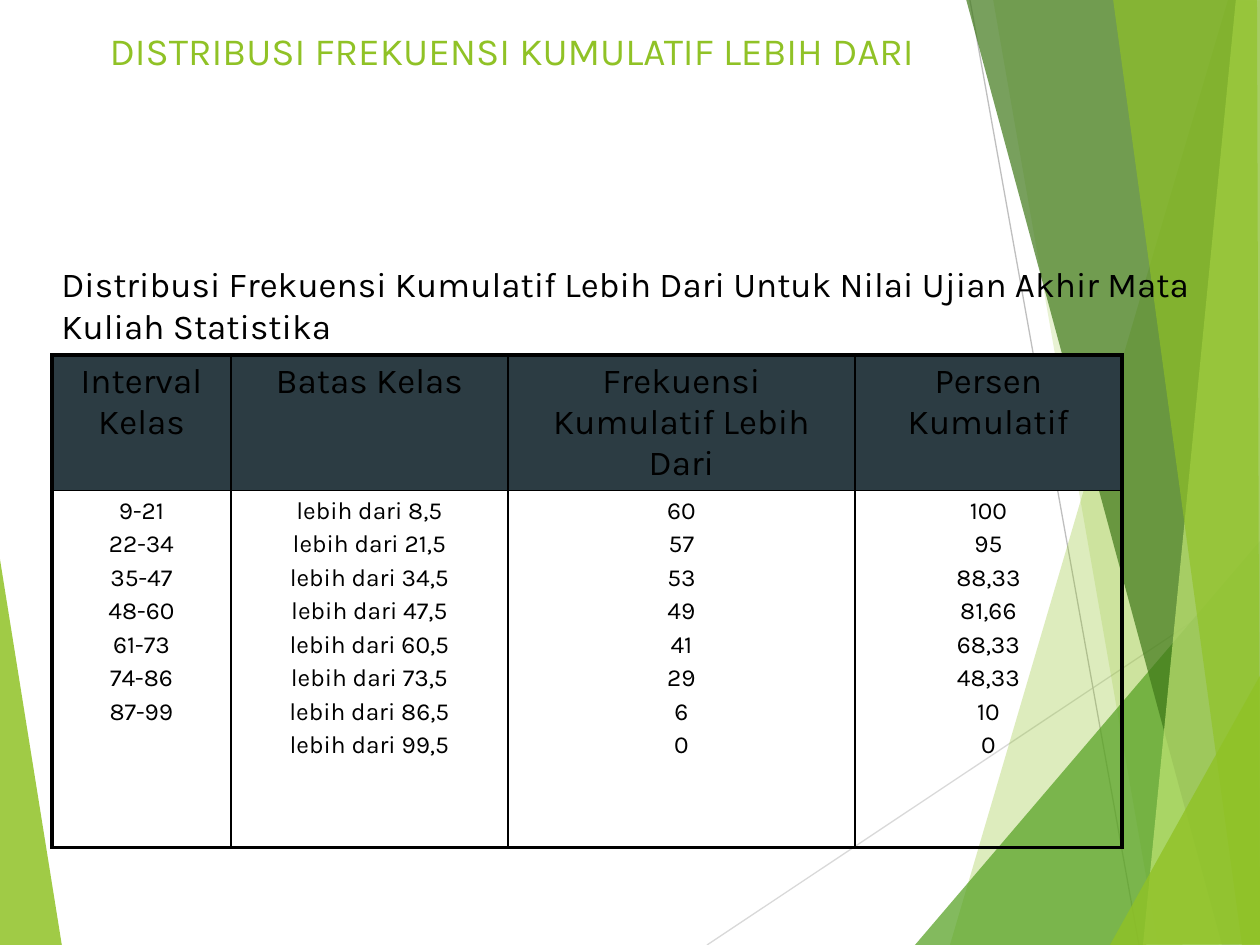
import pptx
import pptx.util
import pptx.oxml
import pptx.oxml.ns
import pptx.dml.color
import pptx.enum.shapes
import pptx.enum.text

SCALE = 914400 / 126  # EMU in one px
LIME, BLACK, SLATE = "90C226", "000000", "2C3C43"
ALIGN = pptx.enum.text.PP_ALIGN


def px(num):
    return pptx.util.Emu(round(num * SCALE))


def tint(code):
    return pptx.dml.color.RGBColor.from_string(code)


def node(tag, **attrs):
    item = pptx.oxml.parse_xml(f"<a:{tag} {pptx.oxml.ns.nsdecls('a')}/>")
    for key, val in attrs.items():
        item.set(key, str(val))
    return item


def write(frame, lines, size=20, color=BLACK, font="Karla", align=ALIGN.LEFT, gap=0):
    frame.word_wrap = True
    for i, line in enumerate(lines):
        para = frame.paragraphs[0] if i == 0 else frame.add_paragraph()
        para.alignment = align
        if i:
            para.space_before = pptx.util.Pt(gap)
        run = para.add_run()
        run.text = line
        run.font.name = font
        run.font.size = pptx.util.Pt(size)
        run.font.color.rgb = tint(color)


class Deck:
    def __init__(self):
        self.show = pptx.Presentation()
        self.show.slide_width, self.show.slide_height = px(1260), px(945)
        self.slide = self.show.slides.add_slide(self.show.slide_layouts[5])
        self.shapes = self.slide.shapes

    def shard(self, points, color, alpha):
        path = self.shapes.build_freeform(*points[0], scale=SCALE)
        path.add_line_segments(points[1:], close=True)
        shape = path.convert_to_shape()
        shape.shadow.inherit = False
        shape.line.fill.background()
        shape.fill.solid()
        shape.fill.fore_color.rgb = tint(color)
        clr = shape.fill._xPr.find(".//" + pptx.oxml.ns.qn("a:srgbClr"))
        clr.append(node("alpha", val=alpha * 1000))

    def line(self, ends, color):
        kind = pptx.enum.shapes.MSO_CONNECTOR.STRAIGHT
        line = self.shapes.add_connector(kind, *map(px, ends))
        line.line.color.rgb = tint(color)
        line.line.width = pptx.util.Pt(0.75)
        line._element.spPr.append(node("effectLst"))

    def title(self, text, box):
        title = self.shapes.title
        title.left, title.top, title.width, title.height = map(px, box)
        title.text_frame.vertical_anchor = pptx.enum.text.MSO_ANCHOR.TOP
        write(title.text_frame, [text], size=22, color=LIME)
        self.shapes._spTree.append(title._element)  # in front of the shards

    def text(self, text, box):
        write(self.shapes.add_textbox(*map(px, box)).text_frame, [text])

    def edge(self, cell, widths):
        props = cell._tc.get_or_add_tcPr()
        for i, (side, width) in enumerate(zip("LRTB", widths)):
            edge = node("ln" + side, w=pptx.util.Pt(width))
            fill = node("solidFill")
            fill.append(node("srgbClr", val=BLACK))
            edge.append(fill)
            props.insert(i, edge)

    def table(self, left, top, cols, rows, data):
        box = map(px, (left, top, sum(cols), sum(rows)))
        table = self.shapes.add_table(len(rows), len(cols), *box).table
        table.first_row = table.horz_banding = False
        for col, width in zip(table.columns, cols):
            col.width = px(width)
        for r, high in enumerate(rows):
            table.rows[r].height = px(high)
            for c, lines in enumerate(data[r]):
                cell = table.cell(r, c)
                if r == 0:
                    cell.fill.solid()
                    cell.fill.fore_color.rgb = tint(SLATE)
                else:
                    cell.fill.background()
                outer = (c == 0, c == len(cols) - 1, r == 0, r == len(rows) - 1)
                self.edge(cell, [2.25 if side else 1 for side in outer])
                write(cell.text_frame, lines, size=14 if r else 20,
                      align=ALIGN.CENTER, gap=2.8)


def main():
    deck = Deck()

    # Green shards and thin lines
    deck.shard([(-1, 553), (62, 946), (-1, 945)], LIME, 85)
    deck.line((707, 945, 1261, 576), "D9D9D9")
    deck.line((970, 0, 1139, 945), "BFBFBF")
    shards = [
        ([(1228, 0), (950, 945), (1262, 946), (1261, 1)], LIME, 30),
        ([(993, -1), (1158, 945), (1261, 945), (1261, -1)], LIME, 20),
        ([(915, 945), (1260, 541), (1261, 945)], "54A021", 72),
        ([(966, -1), (1222, 945), (1261, 944), (1261, -1)], "3F7819", 70),
        ([(1236, -1), (1143, 945), (1261, 945), (1260, -1)], "C0E474", 70),
        ([(1113, -1), (1242, 945), (1260, 945), (1257, -1)], LIME, 65),
        ([(1110, 945), (1261, 674), (1261, 944)], LIME, 80),
    ]
    for shard in shards:
        deck.shard(*shard)

    deck.title("DISTRIBUSI FREKUENSI KUMULATIF LEBIH DARI", (97, 21, 1074, 202))

    # Frequency table
    heads = ["Interval Kelas", "Batas Kelas",
             "Frekuensi Kumulatif Lebih Dari", "Persen Kumulatif"]
    starts = range(9, 88, 13)
    body = [
        [f"{low}-{low + 12}" for low in starts],
        [f"lebih dari {low - 1},5" for low in [*starts, 100]],
        "60 57 53 49 41 29 6 0".split(),
        "100 95 88,33 81,66 68,33 48,33 10 0".split(),
    ]
    deck.table(52, 355, (179, 277, 347, 267), (97, 357),
               [[[head] for head in heads], body])

    # Table caption
    deck.text("Distribusi Frekuensi Kumulatif Lebih Dari Untuk Nilai Ujian "
              "Akhir Mata Kuliah Statistika", (49, 256, 1211, 97))

    deck.show.save("out.pptx")


if __name__ == "__main__":
    main()
